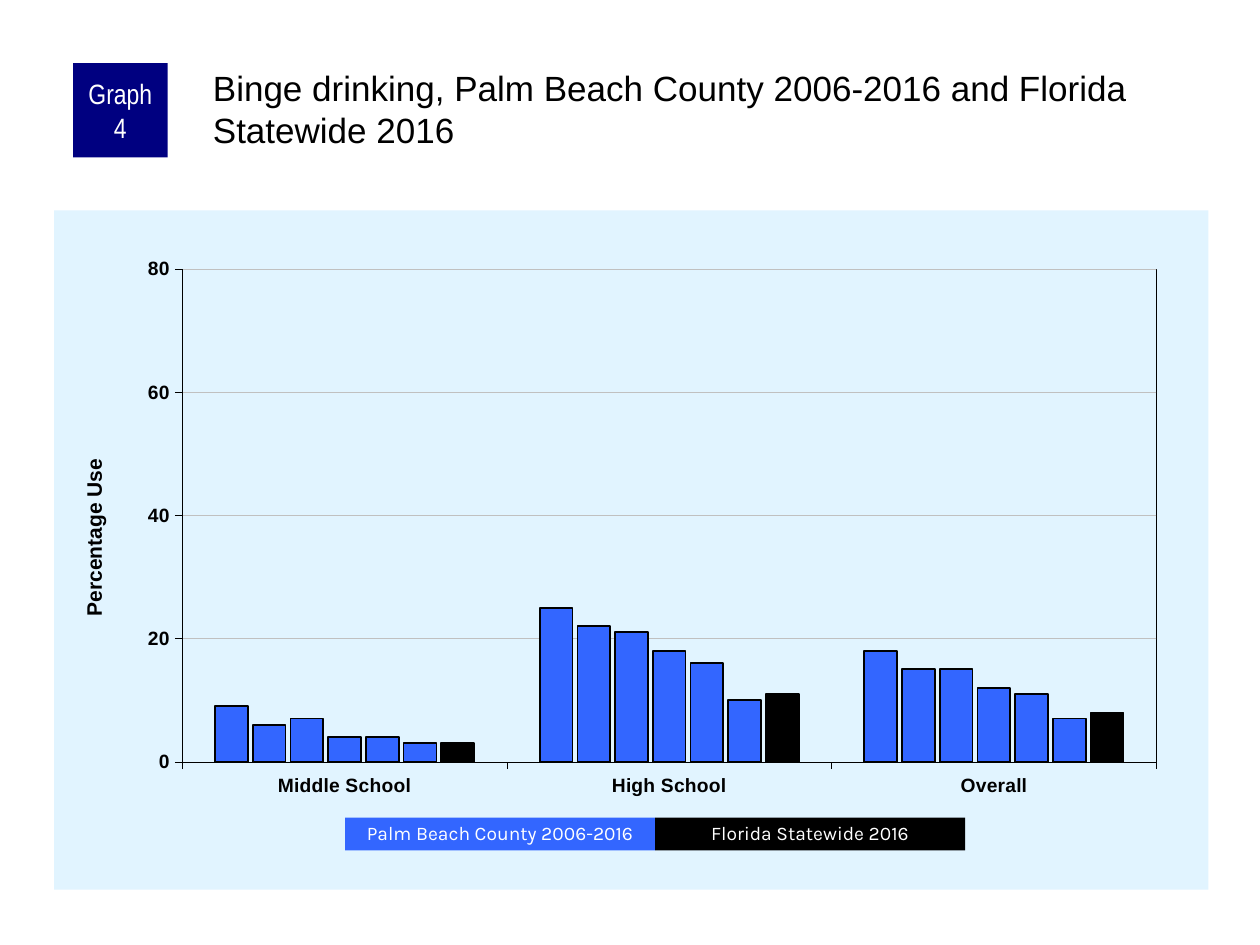
from dataclasses import dataclass

from lxml import etree
from pptx import Presentation
from pptx.chart.data import CategoryChartData
from pptx.dml.color import RGBColor
from pptx.enum.chart import XL_CHART_TYPE, XL_TICK_MARK
from pptx.enum.shapes import MSO_SHAPE
from pptx.enum.text import MSO_ANCHOR, PP_ALIGN
from pptx.oxml import parse_xml
from pptx.oxml.ns import nsdecls, qn
from pptx.util import Inches, Pt

COLUMN = XL_CHART_TYPE.COLUMN_CLUSTERED
TICK_OUTSIDE = XL_TICK_MARK.OUTSIDE
TICK_NONE = XL_TICK_MARK.NONE
RECTANGLE = MSO_SHAPE.RECTANGLE
MIDDLE = MSO_ANCHOR.MIDDLE
CENTER = PP_ALIGN.CENTER


@dataclass(frozen=True)
class Theme:
    navy: str = "000080"
    county: str = "3366FF"
    state: str = "000000"
    ink: str = "000000"
    white: str = "FFFFFF"
    grid: str = "C0C0C0"
    panel: str = "E1F4FF"
    font: str = "Arial"
    badge_font: str = "Arial Narrow"
    legend_font: str = "Karla"
    title_size: int = 20
    badge_size: int = 16
    axis_title_size: int = 12
    label_size: int = 11
    chart_size: int = 8


THEME = Theme()

CATEGORIES = ["Middle School", "High School", "Overall"]
SERIES_VALUES = [
    (9, 25, 18), (6, 22, 15), (7, 21, 15), (4, 18, 12),
    (4, 16, 11), (3, 10, 7), (3, 11, 8),
]


def style_font(font, name, size, color, bold=False):
    font.name = name
    font.size = Pt(size)
    font.bold = bold
    font.color.rgb = RGBColor.from_string(color)


def style_line(line, color, width):
    line.color.rgb = RGBColor.from_string(color)
    line.width = Pt(width)


def set_text(shape, text, name, size, color):
    """Put one formatted paragraph in the shape and return it."""
    shape.text_frame.word_wrap = True
    shape.text_frame.text = text
    paragraph = shape.text_frame.paragraphs[0]
    style_font(paragraph.runs[0].font, name, size, color)
    return paragraph


def add_box(slide, left, top, width, height, fill, text, font, size):
    shape = slide.shapes.add_shape(
        RECTANGLE, Inches(left), Inches(top), Inches(width), Inches(height))
    shape.shadow.inherit = False
    shape.fill.solid()
    shape.fill.fore_color.rgb = RGBColor.from_string(fill)
    shape.line.fill.background()
    text_frame = shape.text_frame
    text_frame.vertical_anchor = MIDDLE
    text_frame.margin_left = text_frame.margin_right = Inches(0.05)
    text_frame.margin_top = text_frame.margin_bottom = 0
    paragraph = set_text(shape, text, font, size, THEME.white)
    paragraph.alignment = CENTER
    return paragraph


def add_title(slide, text):
    box = slide.shapes.add_textbox(
        Inches(1.66), Inches(0.5), Inches(7.92), Inches(0.83))
    text_frame = box.text_frame
    text_frame.margin_left = text_frame.margin_top = Inches(0.03)
    text_frame.margin_right = text_frame.margin_bottom = 0
    set_text(box, text, THEME.font, THEME.title_size, THEME.ink)


def manual_layout(left, top, width=None, height=None):
    """Build a chart layout from fractions of the chart area."""
    layout = etree.Element(qn("c:layout"))
    manual = etree.SubElement(layout, qn("c:manualLayout"))
    settings = [("xMode", "edge"), ("yMode", "edge"), ("x", left), ("y", top)]
    if width is not None:
        settings = [("layoutTarget", "inner"), *settings, ("w", width), ("h", height)]
    for name, value in settings:
        etree.SubElement(manual, qn(f"c:{name}")).set("val", str(value))
    return layout


def style_axis(axis):
    axis.major_tick_mark = TICK_OUTSIDE
    axis.minor_tick_mark = TICK_NONE
    style_font(axis.tick_labels.font, THEME.font, THEME.label_size, THEME.ink, bold=True)
    style_line(axis.format.line, THEME.ink, 0.25)


def style_value_axis(axis):
    style_axis(axis)
    axis.minimum_scale, axis.maximum_scale, axis.major_unit = 0, 80, 20
    axis.has_major_gridlines = True
    style_line(axis.major_gridlines.format.line, THEME.grid, 0.25)

    # Rotated axis title
    title = axis.axis_title
    title.text_frame.text = "Percentage Use"
    run = title.text_frame.paragraphs[0].runs[0]
    style_font(run.font, THEME.font, THEME.axis_title_size, THEME.ink, bold=True)
    element = title._element
    element.find(".//" + qn("a:bodyPr")).set("rot", "-5400000")
    for layout in element.findall(qn("c:layout")):
        element.remove(layout)
    element.find(qn("c:tx")).addnext(manual_layout(0.02, 0.36))


def style_chart_areas(chart):
    """Place the plot, outline it and fill the panel behind it."""
    chart_space = chart._chartSpace
    plot_area = chart_space.find(".//" + qn("c:plotArea"))
    for layout in plot_area.findall(qn("c:layout")):
        plot_area.remove(layout)
    plot_area.insert(0, manual_layout(0.111, 0.086, 0.844, 0.726))
    plot_area.append(parse_xml(
        f'<c:spPr {nsdecls("c", "a")}><a:noFill/><a:ln w="3175"><a:solidFill>'
        f'<a:srgbClr val="{THEME.ink}"/></a:solidFill></a:ln></c:spPr>'))
    chart_space.find(qn("c:chart")).addnext(parse_xml(
        f'<c:spPr {nsdecls("c", "a")}><a:solidFill><a:srgbClr val="{THEME.panel}"/>'
        '</a:solidFill><a:ln><a:noFill/></a:ln></c:spPr>'))


def add_column_chart(slide):
    data = CategoryChartData()
    data.categories = CATEGORIES
    for number, values in enumerate(SERIES_VALUES, 1):
        data.add_series(f"Series {number}", values)
    chart = slide.shapes.add_chart(
        COLUMN, Inches(0.43), Inches(1.67), Inches(9.16), Inches(5.39), data).chart
    chart.has_legend = False
    chart.has_title = False
    style_font(chart.font, THEME.font, THEME.chart_size, THEME.ink)

    # Columns: county years first, the state last
    plot = chart.plots[0]
    plot.vary_by_categories = False
    plot.gap_width = 200
    plot.overlap = -15
    colors = [THEME.county] * (len(SERIES_VALUES) - 1) + [THEME.state]
    for series, color in zip(plot.series, colors):
        series.format.fill.solid()
        series.format.fill.fore_color.rgb = RGBColor.from_string(color)
        style_line(series.format.line, THEME.ink, 1)

    style_axis(chart.category_axis)
    style_value_axis(chart.value_axis)
    style_chart_areas(chart)


def add_legend(slide):
    entries = [("Palm Beach County 2006-2016", THEME.county),
               ("Florida Statewide 2016", THEME.state)]
    width = 2.46
    for index, (text, color) in enumerate(entries):
        paragraph = add_box(slide, 2.74 + index * width, 6.49, width, 0.26, color,
                            text, THEME.legend_font, THEME.label_size)
        paragraph.line_spacing = 0.9


def main():
    presentation = Presentation()
    presentation.slide_width = Inches(10)
    presentation.slide_height = Inches(7.5)
    slide = presentation.slides.add_slide(presentation.slide_layouts[6])

    add_column_chart(slide)
    add_box(slide, 0.58, 0.5, 0.75, 0.75, THEME.navy, "Graph 4",
            THEME.badge_font, THEME.badge_size)
    add_title(slide, "Binge drinking, Palm Beach County 2006-2016 "
                     "and Florida Statewide 2016")
    add_legend(slide)

    presentation.save("out.pptx")


if __name__ == "__main__":
    main()
